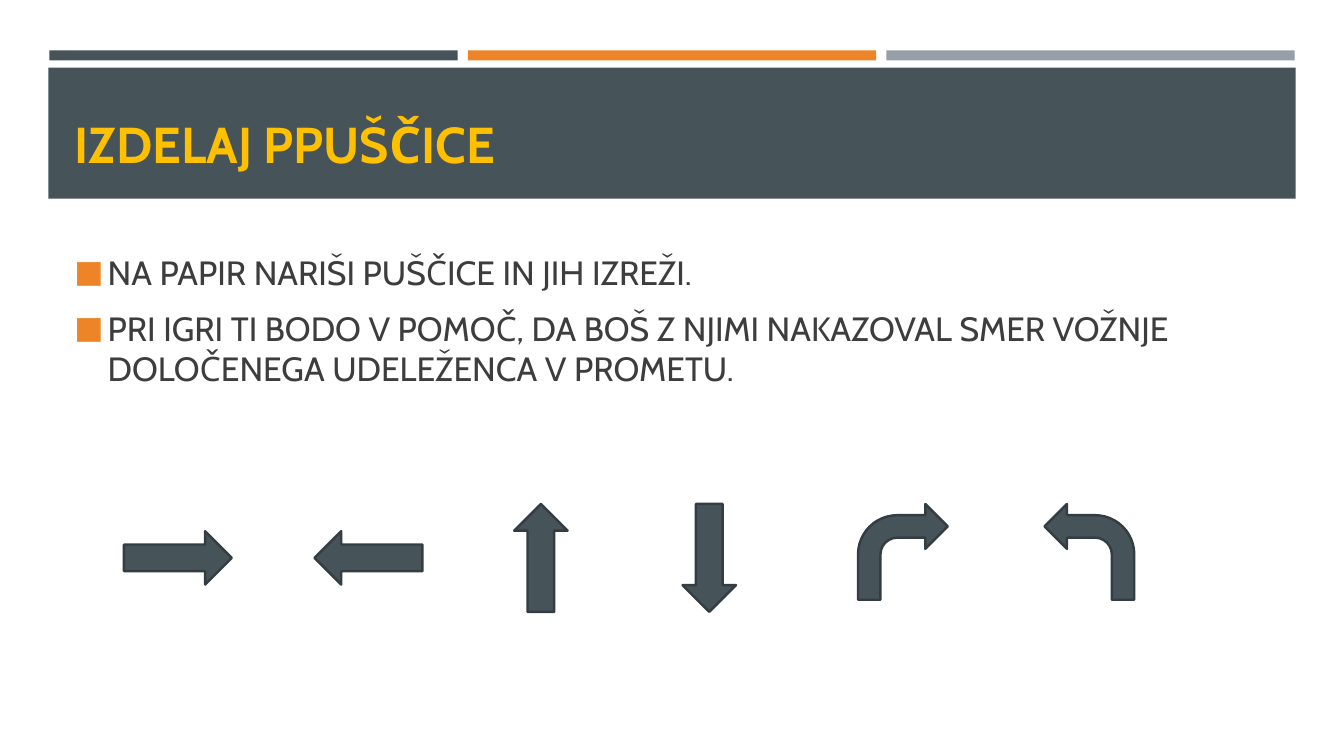
from dataclasses import dataclass

from lxml import etree
from pptx import Presentation
from pptx.dml.color import RGBColor
from pptx.enum.shapes import MSO_SHAPE
from pptx.enum.text import MSO_ANCHOR, PP_ALIGN
from pptx.oxml.ns import qn
from pptx.shapes.autoshape import Shape
from pptx.slide import Slide
from pptx.text.text import _Paragraph
from pptx.util import Inches, Pt

RECTANGLE = MSO_SHAPE.RECTANGLE
RIGHT = MSO_SHAPE.RIGHT_ARROW
LEFT = MSO_SHAPE.LEFT_ARROW
UP = MSO_SHAPE.UP_ARROW
DOWN = MSO_SHAPE.DOWN_ARROW
BENT = MSO_SHAPE.BENT_ARROW
ALIGN_LEFT = PP_ALIGN.LEFT
ANCHOR_BOTTOM = MSO_ANCHOR.BOTTOM
ANCHOR_MIDDLE = MSO_ANCHOR.MIDDLE


@dataclass(frozen=True)
class Theme:
    font: str = "Cabin"
    slate: str = "465359"
    outline: str = "343D42"
    orange: str = "ED8428"
    grey: str = "969FA7"
    gold: str = "FFC000"
    text: str = "3D3D3D"
    title_size: float = 36
    body_size: float = 24
    outline_width: float = 1.75


@dataclass(frozen=True)
class Arrow:
    kind: MSO_SHAPE
    left: float
    top: float
    width: float
    height: float
    mirrored: bool = False


THEME = Theme()
BAR_LEFT, BAR_PITCH = 0.49, 4.15
BAR_COLORS = (THEME.slate, THEME.orange, THEME.grey)
ARROWS = (
    Arrow(RIGHT, 1.23, 5.27, 1.07, 0.53),
    Arrow(LEFT, 3.12, 5.27, 1.07, 0.53),
    Arrow(UP, 5.1, 5, 0.53, 1.07),
    Arrow(DOWN, 6.77, 5, 0.53, 1.07),
    Arrow(BENT, 8.51, 5, 0.89, 0.95),
    Arrow(BENT, 10.36, 5, 0.89, 0.95, mirrored=True),
)
INSTRUCTIONS = (
    "NA PAPIR NARIŠI PUŠČICE IN JIH IZREŽI.",
    "PRI IGRI TI BODO V POMOČ, DA BOŠ Z NJIMI NAKAZOVAL SMER VOŽNJE "
    "DOLOČENEGA UDELEŽENCA V PROMETU.",
)


def add_filled(page: Slide, kind: MSO_SHAPE, left: float, top: float,
               width: float, height: float, color: str) -> Shape:
    shape = page.shapes.add_shape(
        kind, Inches(left), Inches(top), Inches(width), Inches(height))
    shape.shadow.inherit = False
    shape.fill.solid()
    shape.fill.fore_color.rgb = RGBColor.from_string(color)
    shape.line.fill.background()
    return shape


def draw_arrow(page: Slide, arrow: Arrow) -> None:
    shape = add_filled(page, arrow.kind, arrow.left, arrow.top,
                       arrow.width, arrow.height, THEME.slate)
    shape.line.color.rgb = RGBColor.from_string(THEME.outline)
    shape.line.width = Pt(THEME.outline_width)
    if arrow.mirrored:
        shape.element.spPr.find(qn("a:xfrm")).set("flipH", "1")


def write(para: _Paragraph, text: str, *, size: float, color: str,
          bold: bool = False) -> None:
    para.alignment = ALIGN_LEFT
    span = para.add_run()
    span.text = text
    span.font.name = THEME.font
    span.font.size = Pt(size)
    span.font.bold = bold
    span.font.color.rgb = RGBColor.from_string(color)


def add_bullet(para: _Paragraph) -> None:
    properties = para._p.get_or_add_pPr()
    properties.set("marL", str(Inches(0.33)))
    properties.set("indent", str(-Inches(0.33)))
    color = etree.SubElement(properties, qn("a:buClr"))
    etree.SubElement(color, qn("a:srgbClr"), val=THEME.orange)
    etree.SubElement(properties, qn("a:buSzPct"), val="92000")
    etree.SubElement(properties, qn("a:buFont"), typeface=THEME.font)
    etree.SubElement(properties, qn("a:buChar"), char="■")


def draw_header(page: Slide) -> None:
    for index, color in enumerate(BAR_COLORS):
        add_filled(page, RECTANGLE, BAR_LEFT + index * BAR_PITCH, 0.5, 4.05, 0.1, color)
    add_filled(page, RECTANGLE, 0.48, 0.67, 12.37, 1.3, THEME.slate)
    title = page.shapes.title
    title.left, title.top = Inches(0.64), Inches(0.66)
    title.width, title.height = Inches(12.06), Inches(1.11)
    title.text_frame.vertical_anchor = ANCHOR_BOTTOM
    write(title.text_frame.paragraphs[0], "IZDELAJ PPUŠČICE",
          size=THEME.title_size, color=THEME.gold, bold=True)
    title.element.getparent().append(title.element)


def draw_instructions(page: Slide) -> None:
    box = page.shapes.add_textbox(Inches(0.64), Inches(2.31), Inches(12.06), Inches(1.73))
    frame = box.text_frame
    frame.word_wrap = True
    frame.vertical_anchor = ANCHOR_MIDDLE
    for index, text in enumerate(INSTRUCTIONS):
        para = frame.add_paragraph() if index else frame.paragraphs[0]
        add_bullet(para)
        para.space_before = Pt(5 if index else 0)
        para.space_after = Pt(6)
        write(para, text, size=THEME.body_size, color=THEME.text)


def main() -> None:
    deck = Presentation()
    deck.slide_width, deck.slide_height = Inches(13.33), Inches(7.5)
    page = deck.slides.add_slide(deck.slide_layouts[5])
    draw_header(page)
    draw_instructions(page)
    for arrow in ARROWS:
        draw_arrow(page, arrow)
    deck.save("out.pptx")


if __name__ == "__main__":
    main()
